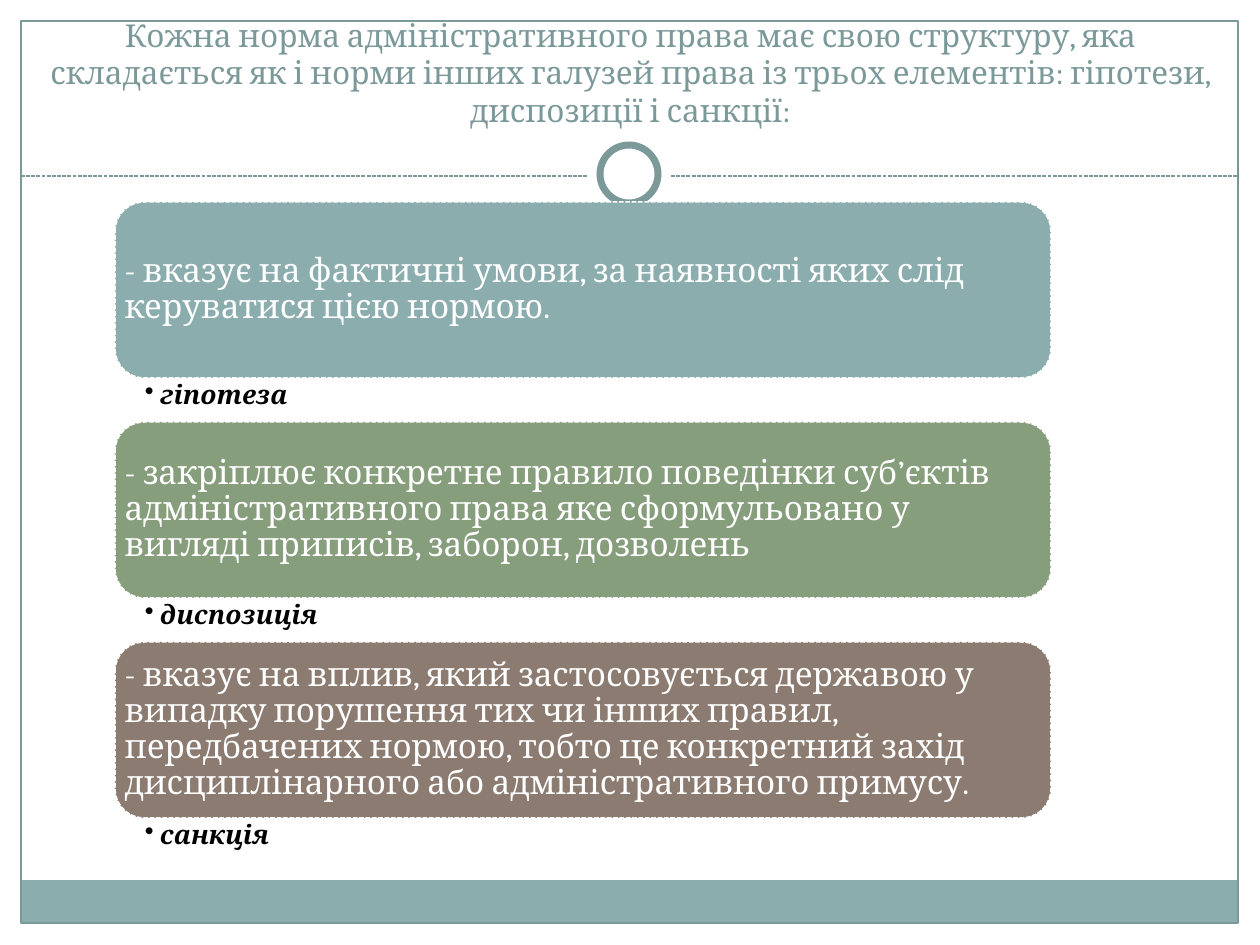
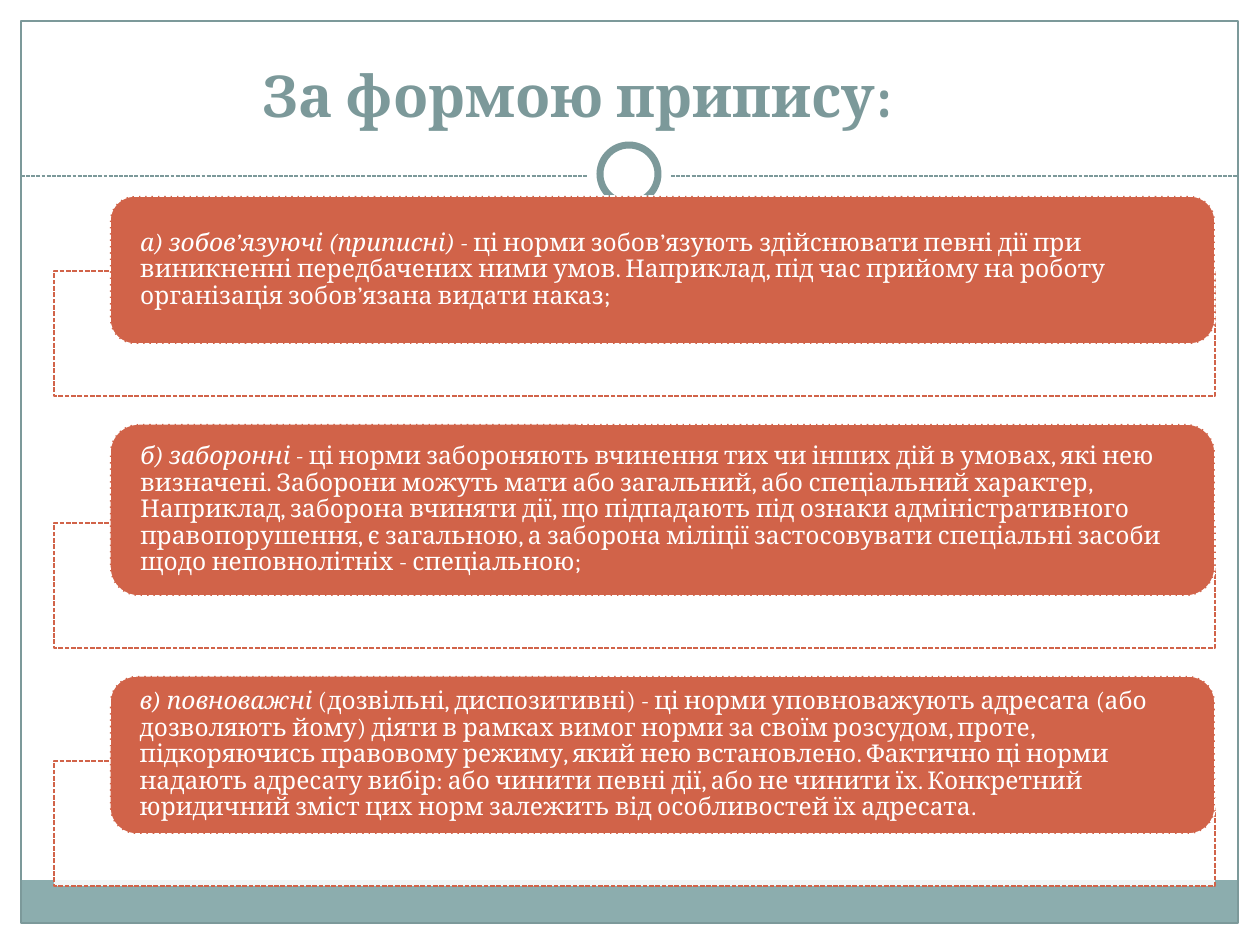
from lxml import etree
from pptx import Presentation
from pptx.dml.color import RGBColor
from pptx.enum.dml import MSO_LINE
from pptx.enum.shapes import MSO_CONNECTOR, MSO_SHAPE
from pptx.enum.text import MSO_ANCHOR, MSO_AUTO_SIZE, PP_ALIGN
from pptx.oxml.ns import qn
from pptx.util import Pt

RECT, ROUND, OVAL = MSO_SHAPE.RECTANGLE, MSO_SHAPE.ROUNDED_RECTANGLE, MSO_SHAPE.OVAL
DASH = MSO_LINE.SQUARE_DOT
TOP, MIDDLE, BOTTOM = MSO_ANCHOR.TOP, MSO_ANCHOR.MIDDLE, MSO_ANCHOR.BOTTOM
FONT = "Cambria"
TITLE_ONLY = 5
CORNER = 0.1667
COLORS = {
    "white": "FFFFFF", "black": "000000", "slate": "7C999A", "teal": "8CADAE",
    "green": "879E7D", "brown": "8C7B70", "rust": "D16349",
}

ELEMENTS = [
    ("гіпотеза", "teal",
     "- вказує на фактичні умови, за наявності яких слід керуватися цією нормою."),
    ("диспозиція", "green",
     "- закріплює конкретне правило поведінки суб’єктів адміністративного права "
     "яке сформульовано у вигляді приписів, заборон, дозволень"),
    ("санкція", "brown",
     "- вказує на вплив, який застосовується державою у випадку порушення тих чи "
     "інших правил, передбачених нормою, тобто це конкретний захід дисциплінарного "
     "або адміністративного примусу."),
]

# Card height, term in italics, explanation
NORM_FORMS = [
    (148, "а) зобов’язуючі (приписні) -",
     " ці норми зобов’язують здійснювати певні дії при виникненні передбачених ними "
     "умов. Наприклад, під час прийому на роботу організація зобов’язана видати наказ;"),
    (172, "б) заборонні -",
     " ці норми забороняють вчинення тих чи інших дій в умовах, які нею визначені. "
     "Заборони можуть мати або загальний, або спеціальний характер, Наприклад, "
     "заборона вчиняти дії, що підпадають під ознаки адміністративного "
     "правопорушення, є загальною, а заборона міліції застосовувати спеціальні "
     "засоби щодо неповнолітніх - спеціальною;"),
    (158, "в) повноважні",
     " (дозвільні, диспозитивні) - ці норми уповноважують адресата (або дозволяють "
     "йому) діяти в рамках вимог норми за своїм розсудом, проте, підкоряючись "
     "правовому режиму, який нею встановлено. Фактично ці норми надають адресату "
     "вибір: або чинити певні дії, або не чинити їх. Конкретний юридичний зміст цих "
     "норм залежить від особливостей їх адресата."),
]


def px(n):
    return round(n * 914400 / 126)


def rgb(name):
    return RGBColor.from_string(COLORS[name])


def style_line(line, color, width, dash=None):
    line.color.rgb = rgb(color)
    line.width = Pt(width)
    if dash:
        line.dash_style = dash


def add_shape(slide, kind, box, fill=None, line=None):
    """Add a flat shape; line is (colour, width) or (colour, width, dash)."""
    sp = slide.shapes.add_shape(kind, *map(px, box))
    sp.shadow.inherit = False
    if fill:
        sp.fill.solid()
        sp.fill.fore_color.rgb = rgb(fill)
    else:
        sp.fill.background()
    if line:
        style_line(sp.line, *line)
    else:
        sp.line.fill.background()
    return sp


def set_frame(sp, anchor, insets):
    tf = sp.text_frame
    tf.word_wrap = True
    tf.auto_size = MSO_AUTO_SIZE.NONE
    tf.vertical_anchor = anchor
    tf.margin_left, tf.margin_top, tf.margin_right, tf.margin_bottom = map(px, insets)
    return tf.paragraphs[0]


def set_font(p, size, color, bold=False, align=PP_ALIGN.LEFT, spacing=0.9):
    p.alignment = align
    p.line_spacing = spacing
    f = p.font
    f.name, f.size, f.bold = FONT, Pt(size), bold
    f.color.rgb = rgb(color)


def add_page_frame(slide, box):
    """Footer band, page border, dashed rule and the ring on it."""
    x, y, w, h = box
    mid, rule = x + w // 2, y + 155
    add_shape(slide, RECT, (x, y + h - 43, w, 43), "teal")
    add_shape(slide, RECT, box, line=("slate", 0.75))
    cxn = slide.shapes.add_connector(
        MSO_CONNECTOR.STRAIGHT, px(x), px(rule), px(x + w), px(rule))
    style_line(cxn.line, "slate", 0.75, DASH)
    etree.SubElement(cxn.element.spPr, qn("a:effectLst"))
    for size, line in ((84, None), (58, ("slate", 4))):
        ring = (mid - size // 2, rule - 2 - size // 2, size, size)
        add_shape(slide, OVAL, ring, "white", line)


def add_slide(prs, title, box, size, bold=False):
    slide = prs.slides.add_slide(prs.slide_layouts[TITLE_ONLY])
    add_page_frame(slide, (21, 21, 1217, 902))
    sp = slide.shapes.title
    sp.left, sp.top, sp.width, sp.height = map(px, box)
    p = set_frame(sp, BOTTOM, (13, 6, 13, 6))
    p.text = title
    set_font(p, size, "slate", bold, PP_ALIGN.CENTER, 1.0)
    return slide


def add_card(slide, box, fill, pad):
    """Rounded card whose text starts pad px from its left edge."""
    sp = add_shape(slide, ROUND, box, fill, ("white", 0.9, DASH))
    sp.adjustments[0] = CORNER
    corner_inset = round(0.29 * CORNER * box[3])
    side = pad - corner_inset
    return set_frame(sp, MIDDLE, (side, 0, side, 0))


def add_label(slide, box, text):
    sp = slide.shapes.add_textbox(*map(px, box))
    p = set_frame(sp, TOP, (30, 4, 19, 4))
    p.text = text
    set_font(p, 15, "black", True)
    p.font.italic = True
    pPr = p._p.get_or_add_pPr()
    pPr.set("marL", str(px(15)))
    pPr.set("indent", str(-px(15)))
    bullet = etree.Element(qn("a:buChar"), char="•")
    pPr.find(qn("a:defRPr")).addprevious(bullet)


def add_elements(slide, box):
    """Stack of cards, each with its bulleted name below."""
    x, y, w, h = box
    card_h, label_h = 176, 44
    pitch = h // len(ELEMENTS)
    for i, (name, fill, text) in enumerate(ELEMENTS):
        top = y + i * pitch
        p = add_card(slide, (x, top, w, card_h), fill, 10)
        p.text = text
        set_font(p, 19, "white")
        add_label(slide, (x, top + card_h, w, label_h), name)


def add_norm_forms(slide, box):
    """Cards of varying height, each over a dashed, nearly opaque backing."""
    x, top, w, _ = box
    back_h, overhang, gap, indent = 125, 52, 28, 56
    for card_h, term, text in NORM_FORMS:
        back_bottom = top + card_h + overhang
        back = add_shape(slide, RECT, (x, back_bottom - back_h, w, back_h),
                         "white", ("rust", 0.9, DASH))
        color = back.element.spPr.find(qn("a:solidFill"))[0]
        etree.SubElement(color, qn("a:alpha"), val="90000")
        p = add_card(slide, (x + indent, top, w - indent, card_h), "rust", 30)
        set_font(p, 14, "white")
        r = p.add_run()
        r.text = term
        r.font.italic = True
        p.add_run().text = text
        top = back_bottom + gap


def main():
    prs = Presentation()
    prs.slide_width, prs.slide_height = px(1260), px(945)
    slide = add_slide(
        prs,
        "Кожна норма адміністративного права має свою структуру, яка складається як "
        "і норми інших галузей права із трьох елементів: гіпотези, диспозиції і санкції:",
        (25, 38, 1211, 97), 18)
    add_elements(slide, (115, 202, 936, 660))
    slide = add_slide(prs, "За формою припису:", (63, 38, 1029, 97), 33, True)
    add_norm_forms(slide, (54, 196, 1161, 690))
    prs.save("out.pptx")


if __name__ == "__main__":
    main()
